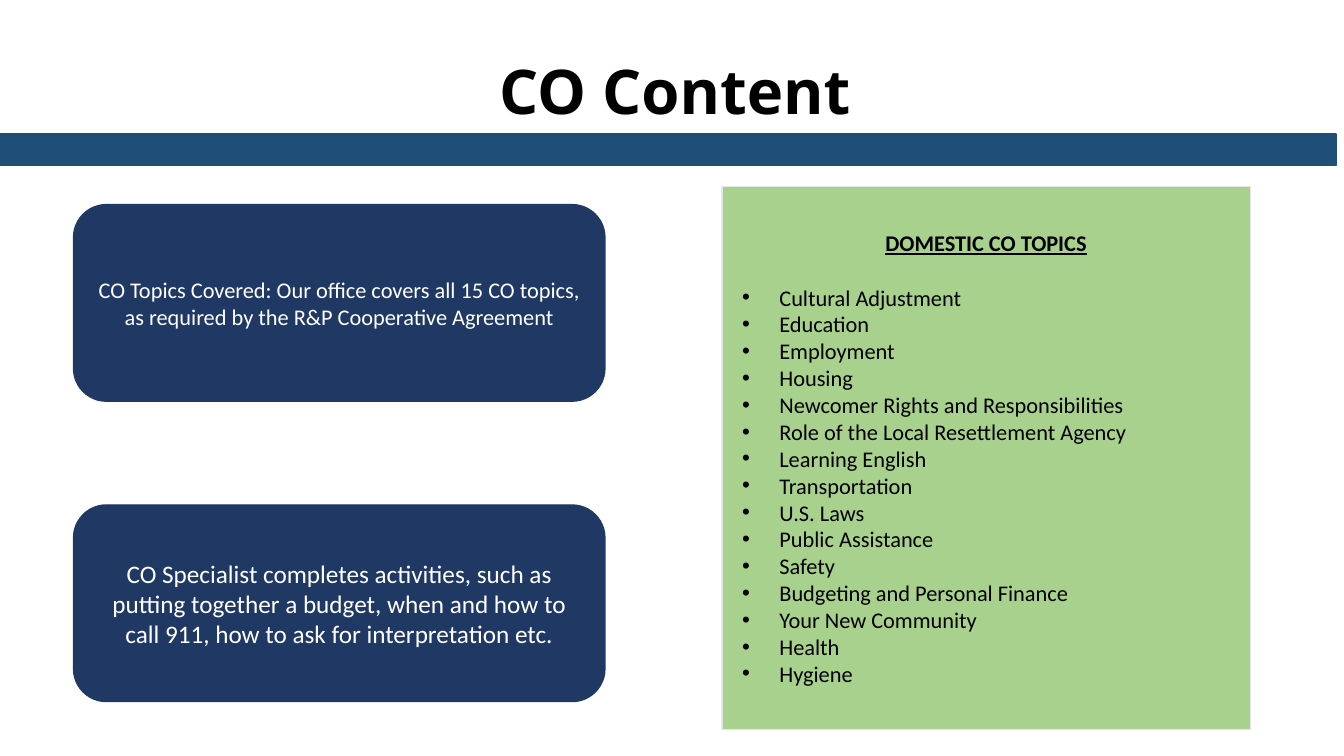
from pptx import Presentation
from pptx.dml.color import RGBColor
from pptx.enum.shapes import MSO_SHAPE
from pptx.enum.text import MSO_ANCHOR, MSO_AUTO_SIZE, PP_ALIGN
from pptx.oxml.ns import qn
from pptx.util import Inches, Pt
from lxml import etree

CENTER, LEFT = PP_ALIGN.CENTER, PP_ALIGN.LEFT
MIDDLE, NO_FIT = MSO_ANCHOR.MIDDLE, MSO_AUTO_SIZE.NONE
RECTANGLE, ROUNDED = MSO_SHAPE.RECTANGLE, MSO_SHAPE.ROUNDED_RECTANGLE

THEME = {
    "band": "1F4E79", "card": "203864", "panel": "A9D18E", "panel_line": "E7E6E6",
    "dark": "000000", "light": "FFFFFF",
    "title_font": "Open Sans", "body_font": "Calibri",
    "title_size": 44, "large_size": 18, "body_size": 16,
}

CARD_LEFT, CARD_TOP, CARD_WIDTH, CARD_HEIGHT = 0.73, 2.03, 5.27, 1.95
CARD_PITCH = 2.98
LIST_INDENT = Inches(0.37)

CARDS = [
    ("CO Topics Covered: Our office covers all 15 CO topics, "
     "as required by the R&P Cooperative Agreement", "body_size"),
    ("CO Specialist completes activities, such as putting together a budget, "
     "when and how to call 911, how to ask for interpretation etc.", "large_size"),
]
TOPICS = [
    "Cultural Adjustment", "Education", "Employment", "Housing",
    "Newcomer Rights and Responsibilities", "Role of the Local Resettlement Agency",
    "Learning English", "Transportation", "U.S. Laws", "Public Assistance", "Safety",
    "Budgeting and Personal Finance", "Your New Community", "Health", "Hygiene",
]


def paint(shape, fill, line):
    shape.fill.solid()
    shape.fill.fore_color.rgb = RGBColor.from_string(THEME[fill])
    shape.line.color.rgb = RGBColor.from_string(THEME[line])
    shape.line.width = Pt(1)
    shape.shadow.inherit = False


def style(paragraph, size, color, align, font="body_font", bold=False):
    paragraph.alignment = align
    paragraph.font.name = THEME[font]
    paragraph.font.size = Pt(THEME[size])
    paragraph.font.color.rgb = RGBColor.from_string(THEME[color])
    paragraph.font.bold = bold


prs = Presentation()
prs.slide_width, prs.slide_height = Inches(13.33), Inches(7.5)
slide = prs.slides.add_slide(prs.slide_layouts[1])

# Title
title = slide.shapes.title
title.left, title.top, title.width, title.height = map(Inches, (0.58, 0.47, 12.23, 0.84))
title.text_frame.text = "CO Content"
title.text_frame.auto_size = NO_FIT
title.text_frame.vertical_anchor = MIDDLE
style(title.text_frame.paragraphs[0], "title_size", "dark", CENTER, "title_font", True)

# Band under the title
band = slide.shapes.add_shape(RECTANGLE, Inches(-0.08), Inches(1.33), prs.slide_width, Inches(0.31))
paint(band, "band", "band")

# Cards on the left
for row, (message, size) in enumerate(CARDS):
    card = slide.shapes.add_shape(
        ROUNDED, Inches(CARD_LEFT), Inches(CARD_TOP + row * CARD_PITCH),
        Inches(CARD_WIDTH), Inches(CARD_HEIGHT))
    paint(card, "card", "card")
    card.text_frame.word_wrap = True
    card.text_frame.vertical_anchor = MIDDLE
    card.text_frame.text = message
    style(card.text_frame.paragraphs[0], size, "light", CENTER)

# Topic panel on the right
panel = slide.placeholders[1]
panel.left, panel.top, panel.width, panel.height = map(Inches, (7.16, 1.85, 5.24, 5.39))
paint(panel, "panel", "panel_line")
topics = panel.text_frame
topics.auto_size = NO_FIT
topics.vertical_anchor = MIDDLE
topics.margin_left = topics.margin_right = Inches(0.2)
topics.margin_top = topics.margin_bottom = Inches(0.1)
topics.text = "\n".join(["DOMESTIC CO TOPICS", *TOPICS])

heading, *entries = topics.paragraphs
heading_props = heading._p.get_or_add_pPr()
heading_props.set("marL", "0")
heading_props.set("indent", "0")
etree.SubElement(heading_props, qn("a:buNone"))
style(heading, "body_size", "dark", CENTER, bold=True)
heading.font.underline = True
heading.space_before = Pt(0)
heading.space_after = Pt(19.5)

for entry in entries:
    entry_props = entry._p.get_or_add_pPr()
    entry_props.set("marL", str(LIST_INDENT))
    entry_props.set("indent", str(-LIST_INDENT))
    etree.SubElement(entry_props, qn("a:buFont")).set("typeface", "Arial")
    etree.SubElement(entry_props, qn("a:buChar")).set("char", "•")
    style(entry, "body_size", "dark", LEFT)
    entry.space_before = Pt(0)

prs.save("out.pptx")
